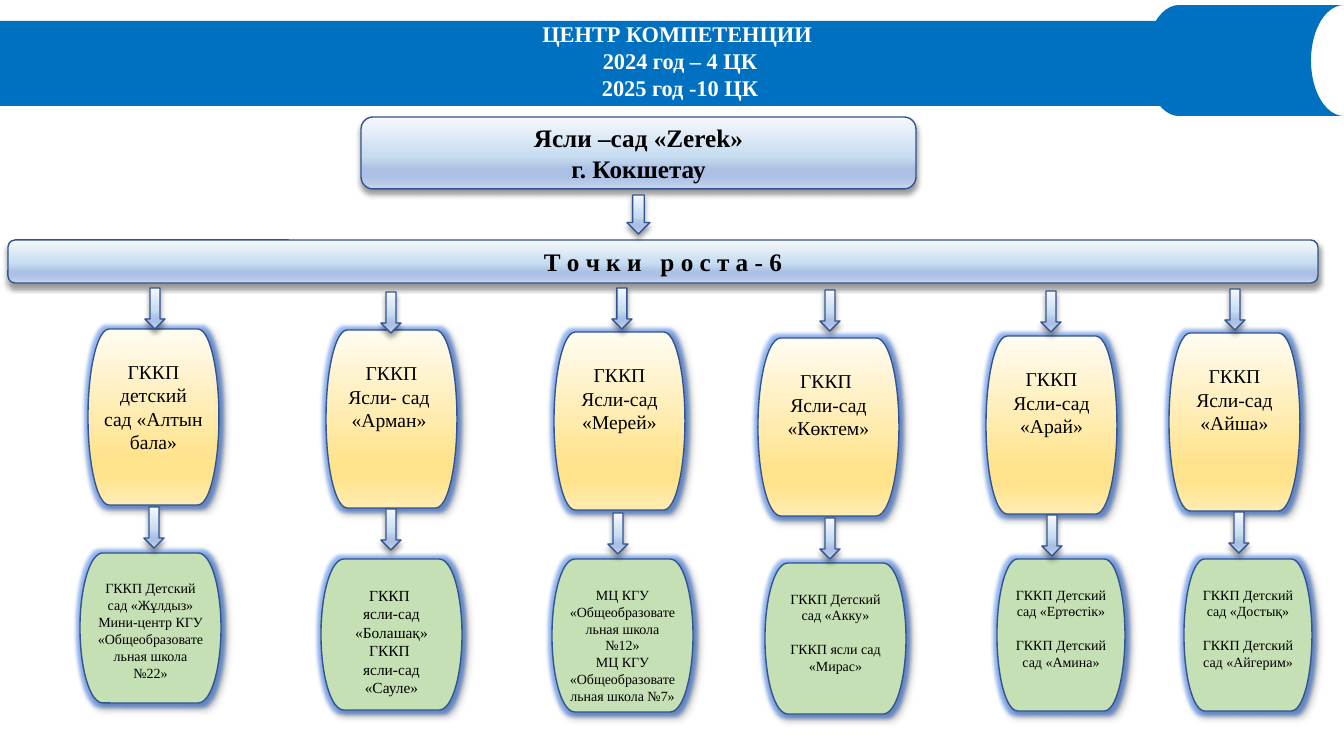
from dataclasses import dataclass

from pptx import Presentation
from pptx.dml.color import RGBColor
from pptx.enum.shapes import MSO_SHAPE as Preset
from pptx.enum.text import MSO_ANCHOR as Anchor, PP_ALIGN as Align
from pptx.oxml import parse_xml
from pptx.oxml.ns import nsdecls
from pptx.util import Emu, Pt

# Content
TITLE = ["ЦЕНТР КОМПЕТЕНЦИИ ", "2024 год – 4 ЦК", "2025 год -10 ЦК"]
LEAD = ["Ясли –сад «Zerek»", "г. Кокшетау"]
GROWTH = ["Т о ч к и   р о с т а - 6"]

# Growth point: (place, lines); partners: (place, lines, size, gap); arrows: (left, top)
BRANCHES = [
    dict(point=((88, 329, 131, 176), ["ГККП детский сад «Алтын бала»"]),
         partners=((80, 553, 141, 150),
                   ["ГККП Детский сад «Жұлдыз»",
                    "Мини-центр КГУ «Общеобразовательная школа №22»"], "small", 0),
         arrows=[(145, 288), (144, 507)]),
    dict(point=((326, 330, 131, 178), ["ГККП Ясли- сад ", "«Арман» "]),
         partners=((321, 559, 141, 151),
                   ["ГККП ", "ясли-сад «Болашақ»", "ГККП ", "ясли-сад «Сауле»"],
                   "medium", 0),
         arrows=[(381, 292), (381, 509)]),
    dict(point=((554, 332, 131, 178), ["ГККП Ясли-сад «Мерей»"]),
         partners=((552, 559, 141, 153),
                   ["МЦ КГУ «Общеобразовательная школа №12»",
                    "МЦ КГУ «Общеобразовательная школа №7»"], "small", 0),
         arrows=[(612, 288), (608, 513)]),
    dict(point=((758, 338, 141, 178), ["ГККП ", "Ясли-сад «Көктем»"]),
         partners=((765, 563, 141, 151),
                   ["ГККП Детский сад «Акку»", "ГККП ясли сад «Мирас»"], "small", 12),
         arrows=[(820, 290), (820, 518)]),
    dict(point=((986, 336, 131, 178), ["ГККП", "Ясли-сад «Арай»"]),
         partners=((997, 559, 128, 152),
                   ["ГККП Детский сад «Ертөстік»", "ГККП Детский сад «Амина»"],
                   "small", 12),
         arrows=[(1041, 291), (1042, 515)]),
    dict(point=((1169, 333, 131, 178), ["ГККП", "Ясли-сад «Айша»"]),
         partners=((1184, 559, 128, 152),
                   ["ГККП Детский сад «Достық»", "ГККП Детский сад «Айгерим»"],
                   "small", 12),
         arrows=[(1225, 289), (1229, 512)]),
]
ARROW_SIZE = (20, 41)


@dataclass(frozen=True)
class Theme:
    font: str = "Times New Roman"
    banner: str = "0070C0"
    light: str = "FFFFFF"
    dark: str = "000000"
    outline: str = "325491"
    glow: str = "4472C4"
    green: str = "C5E0B4"
    blue: tuple = ((0, "F6F8FC"), (54, "C7DDF1"), (74, "ABC0E4"),
                   (83, "ABC0E4"), (100, "C7D5ED"))
    yellow: tuple = ((0, "FFFCF2"), (74, "FFE38C"), (83, "FFE38C"), (100, "FFECB2"))
    heading: int = 18
    title: int = 16
    body: int = 14
    medium: int = 11
    small: int = 10


THEME = Theme()
PX = 914400 / 100.8


def px(*lengths):
    return [Emu(round(length * PX)) for length in lengths]


def write(box, lines, *, size, color=THEME.dark, bold=False, anchor=Anchor.TOP, gap=0):
    frame = box.text_frame
    frame.word_wrap = True
    frame.vertical_anchor = anchor
    for index, line in enumerate(lines):
        para = frame.add_paragraph() if index else frame.paragraphs[0]
        para.alignment = Align.CENTER
        if index and gap:
            para.space_before = Pt(gap)
        span = para.add_run()
        span.text = line
        span.font.name = THEME.font
        span.font.size = Pt(size)
        span.font.bold = bold
        span.font.color.rgb = RGBColor.from_string(color)


def add_effects(shape, angle, glow):
    effects = shape._element.spPr.find(
        "{http://schemas.openxmlformats.org/drawingml/2006/main}effectLst")
    if glow:
        effects.append(parse_xml(
            f'<a:glow {nsdecls("a")} rad="63500"><a:srgbClr val="{THEME.glow}">'
            '<a:satMod val="175000"/><a:alpha val="40000"/></a:srgbClr></a:glow>'))
    effects.append(parse_xml(
        f'<a:outerShdw {nsdecls("a")} blurRad="{Pt(4)}" dist="{Pt(3)}" '
        f'dir="{angle * 60000}" rotWithShape="0"><a:srgbClr val="{THEME.dark}">'
        '<a:alpha val="40000"/></a:srgbClr></a:outerShdw>'))


def draw(page, preset, place, fill, *, outlined=True, angle=90, glow=False):
    shape = page.shapes.add_shape(preset, *px(*place))
    shape.shadow.inherit = False
    if isinstance(fill, str):
        shape.fill.solid()
        shape.fill.fore_color.rgb = RGBColor.from_string(fill)
    else:
        stops = "".join(f'<a:gs pos="{pos * 1000}"><a:srgbClr val="{color}"/></a:gs>'
                        for pos, color in fill)
        # The fill follows the transform and the geometry
        shape._element.spPr.insert(2, parse_xml(
            f'<a:gradFill {nsdecls("a")} rotWithShape="1"><a:gsLst>{stops}</a:gsLst>'
            '<a:lin ang="5400000" scaled="0"/></a:gradFill>'))
    if outlined:
        shape.line.color.rgb = RGBColor.from_string(THEME.outline)
        shape.line.width = Pt(1)
        add_effects(shape, angle, glow)
    else:
        shape.line.fill.background()
    return shape


def draw_banner(page):
    draw(page, Preset.RECTANGLE, (0, 21, 1268, 85), THEME.banner, outlined=False)
    draw(page, Preset.FLOWCHART_STORED_DATA, (1146, 5, 198, 111), THEME.banner,
         outlined=False)
    box = page.shapes.add_textbox(*px(79, 15, 1202, 95))
    write(box, TITLE, size=THEME.title, color=THEME.light, bold=True)


def draw_headings(page):
    for place, lines in [((361, 117, 555, 72), LEAD), ((8, 240, 1310, 43), GROWTH)]:
        box = draw(page, Preset.ROUNDED_RECTANGLE, place, THEME.blue)
        write(box, lines, size=THEME.heading, bold=True, anchor=Anchor.MIDDLE)
    draw(page, Preset.DOWN_ARROW, (627, 195, 23, 39), THEME.blue)


def draw_branch(page, point, partners, arrows):
    place, lines = point
    box = draw(page, Preset.FLOWCHART_TERMINATOR, place, THEME.yellow, angle=45, glow=True)
    write(box, lines, size=THEME.body)
    place, lines, size, gap = partners
    box = draw(page, Preset.FLOWCHART_TERMINATOR, place, THEME.green, angle=45, glow=True)
    write(box, lines, size=getattr(THEME, size), gap=gap)
    for corner in arrows:
        draw(page, Preset.DOWN_ARROW, corner + ARROW_SIZE, THEME.blue)


def main():
    deck = Presentation()
    deck.slide_width, deck.slide_height = px(1344, 756)
    page = deck.slides.add_slide(deck.slide_layouts[6])
    draw_banner(page)
    draw_headings(page)
    for branch in BRANCHES:
        draw_branch(page, **branch)
    deck.save("out.pptx")


if __name__ == "__main__":
    main()
